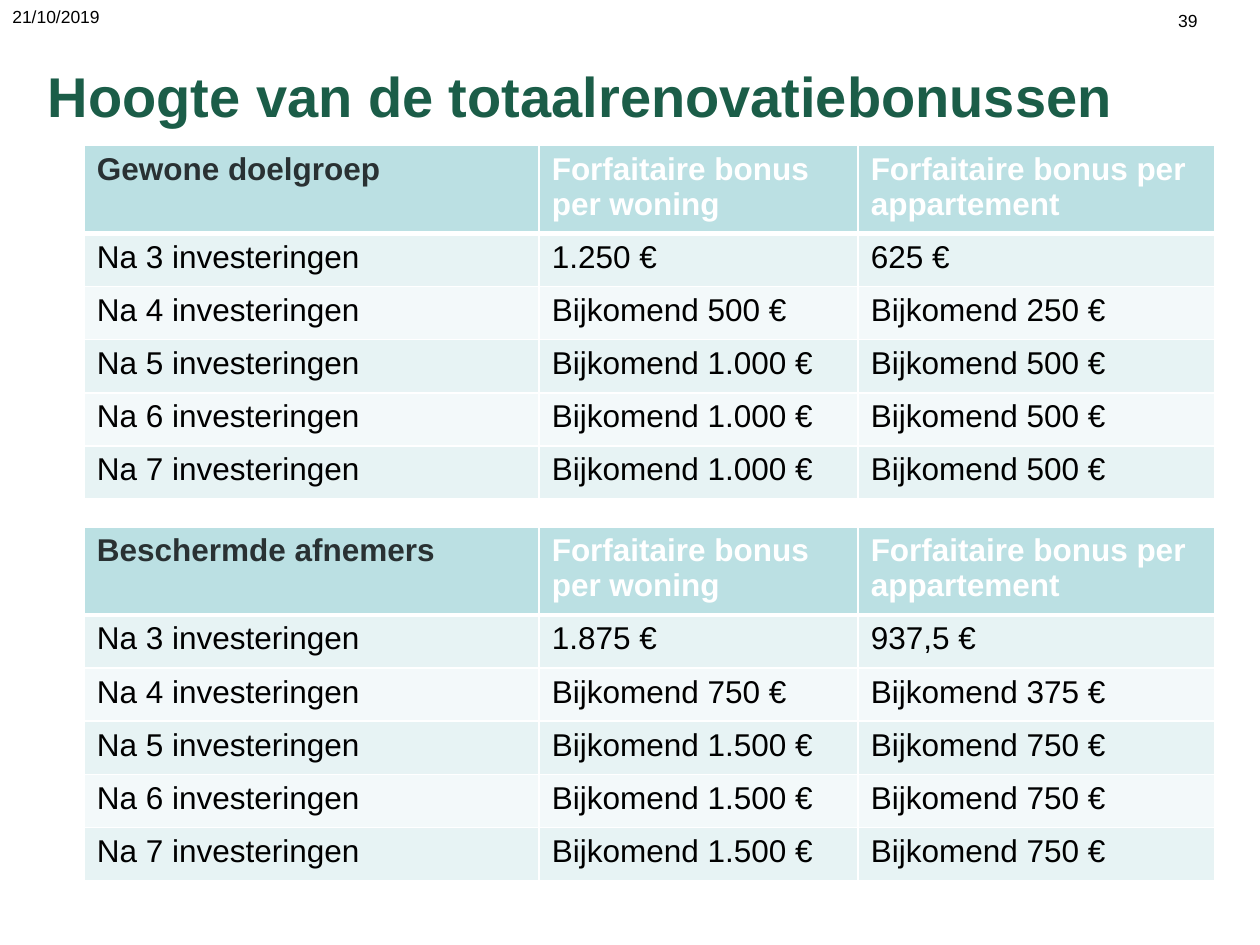
import pptx
import pptx.util
import pptx.dml.color
import pptx.enum.text
import pptx.oxml.ns
from lxml import etree

Cm = pptx.util.Cm
Pt = pptx.util.Pt

COLORS = {
    "green": "1B5D48", "dark": "293133", "black": "000000", "white": "FFFFFF",
    "header": "BBE0E3", "odd": "E7F3F4", "even": "F3F9FA",
}

# Text formats: font attributes plus a colour name
SMALL = {"name": "Arial", "size": Pt(10), "bold": False, "color": "black"}
TITLE = {"name": "Arial", "size": Pt(32), "bold": True, "color": "green"}
BODY = {"name": "Arial", "size": Pt(18), "bold": False, "color": "black"}
HEAD = {**BODY, "bold": True, "color": "white"}
GROUP = {**HEAD, "color": "dark"}

COLUMN_WIDTHS = [Cm(9.17), Cm(6.43), Cm(7.19)]
HEADER_HEIGHT, ROW_HEIGHT = Cm(1.65), Cm(1.07)
HEADINGS = ["Forfaitaire bonus per woning", "Forfaitaire bonus per appartement"]

# Group, top in cm, and (house, apartment) amounts after 3 to 7 investments
TABLES = [
    ("Gewone doelgroep", 2.93,
     [("1.250", "625"), ("500", "250")] + [("1.000", "500")] * 3),
    ("Beschermde afnemers", 10.62,
     [("1.875", "937,5"), ("750", "375")] + [("1.500", "750")] * 3),
]


def rgb(name):
    return pptx.dml.color.RGBColor.from_string(COLORS[name])


def write(tf, text, fmt):
    p = tf.paragraphs[0]
    p.alignment = pptx.enum.text.PP_ALIGN.LEFT
    r = p.add_run()
    r.text = text
    for key, value in fmt.items():
        if key == "color":
            r.font.color.rgb = rgb(value)
        else:
            setattr(r.font, key, value)


def add_label(s, text, left, top, width, height):
    tf = s.shapes.add_textbox(Cm(left), Cm(top), Cm(width), Cm(height)).text_frame
    tf.word_wrap = True
    write(tf, text, SMALL)


def add_title(s, text):
    sp = s.shapes.title
    place = {"left": Cm(0.71), "top": Cm(0.91), "width": Cm(24.69), "height": Cm(2.01)}
    for key, value in place.items():
        setattr(sp, key, value)
    sp.text_frame.vertical_anchor = pptx.enum.text.MSO_ANCHOR.MIDDLE
    write(sp.text_frame, text, TITLE)


def set_borders(cell, widths):
    qn = pptx.oxml.ns.qn
    tc_pr = cell._tc.get_or_add_tcPr()
    for side in "LRTB":
        ln = etree.SubElement(tc_pr, qn(f"a:ln{side}"), w=str(Pt(widths.get(side, 1))))
        fill = etree.SubElement(ln, qn("a:solidFill"))
        etree.SubElement(fill, qn("a:srgbClr"), val=COLORS["white"])


def fill_cell(cell, text, fmt, color, borders):
    set_borders(cell, borders)
    cell.fill.solid()
    cell.fill.fore_color.rgb = rgb(color)
    write(cell.text_frame, text, fmt)


def bonus_rows(group, amounts):
    rows = [[group] + HEADINGS]
    for count, pair in enumerate(amounts, start=3):
        prefix = "" if count == 3 else "Bijkomend "
        rows.append([f"Na {count} investeringen"] + [f"{prefix}{a} €" for a in pair])
    return rows


def add_bonus_table(s, group, top, amounts):
    rows = bonus_rows(group, amounts)
    heights = [HEADER_HEIGHT] + [ROW_HEIGHT] * len(amounts)
    table = s.shapes.add_table(len(rows), len(COLUMN_WIDTHS), Cm(1.7), Cm(top),
                               sum(COLUMN_WIDTHS), sum(heights)).table
    for column, width in zip(table.columns, COLUMN_WIDTHS):
        column.width = width
    for i, (row, height) in enumerate(zip(rows, heights)):
        table.rows[i].height = height
        color = "header" if i == 0 else "odd" if i % 2 else "even"
        # Thick rule between the header and the first row
        borders = {0: {"B": 3}, 1: {"T": 3}}.get(i, {})
        for j, text in enumerate(row):
            fmt = BODY if i else HEAD if j else GROUP
            fill_cell(table.cell(i, j), text, fmt, color, borders)


def main():
    prs = pptx.Presentation()
    prs.slide_width, prs.slide_height = Cm(25.4), Cm(19.05)
    s = prs.slides.add_slide(prs.slide_layouts[5])

    # Page number, date and title
    add_label(s, "39", 23.5, 0.08, 1.52, 1.32)
    add_label(s, "21/10/2019", 0, 0, 7.9, 1.32)
    add_title(s, "Hoogte van de totaalrenovatiebonussen")

    # One table per target group
    for group, top, amounts in TABLES:
        add_bonus_table(s, group, top, amounts)

    prs.save("out.pptx")


if __name__ == "__main__":
    main()
